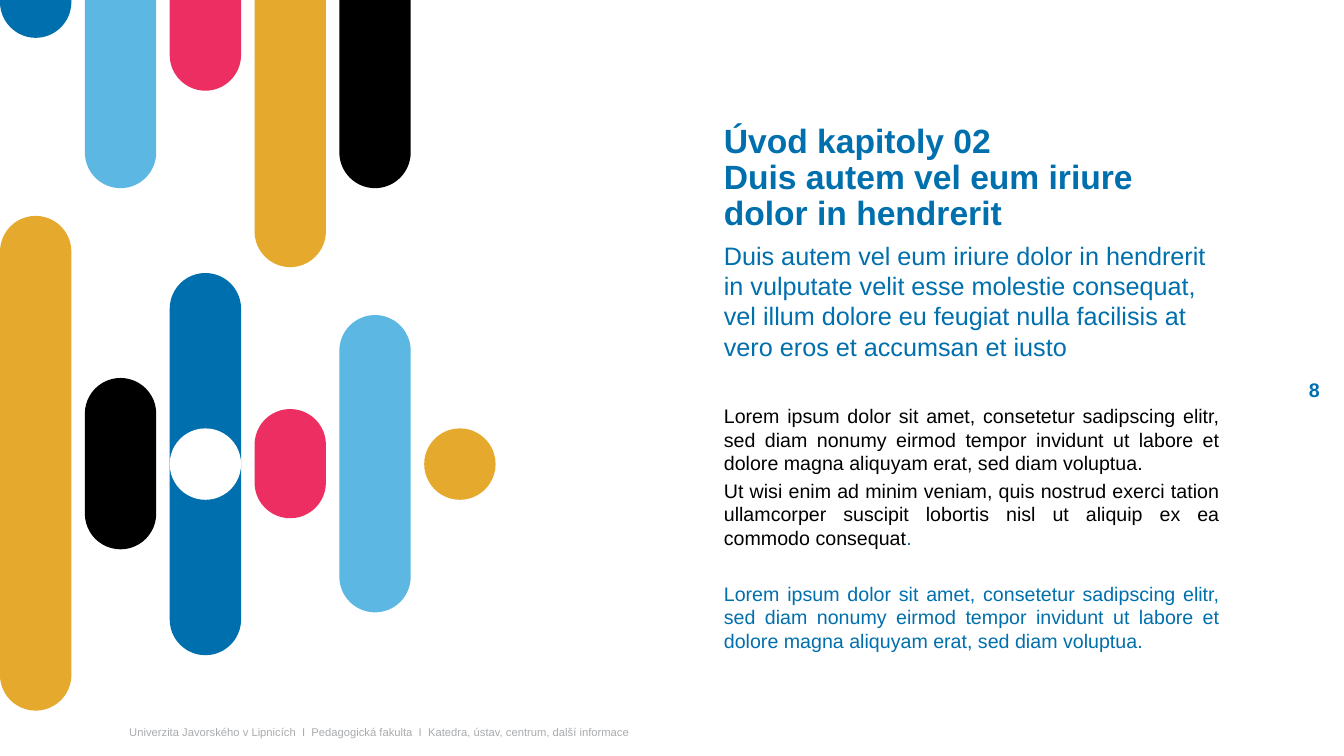
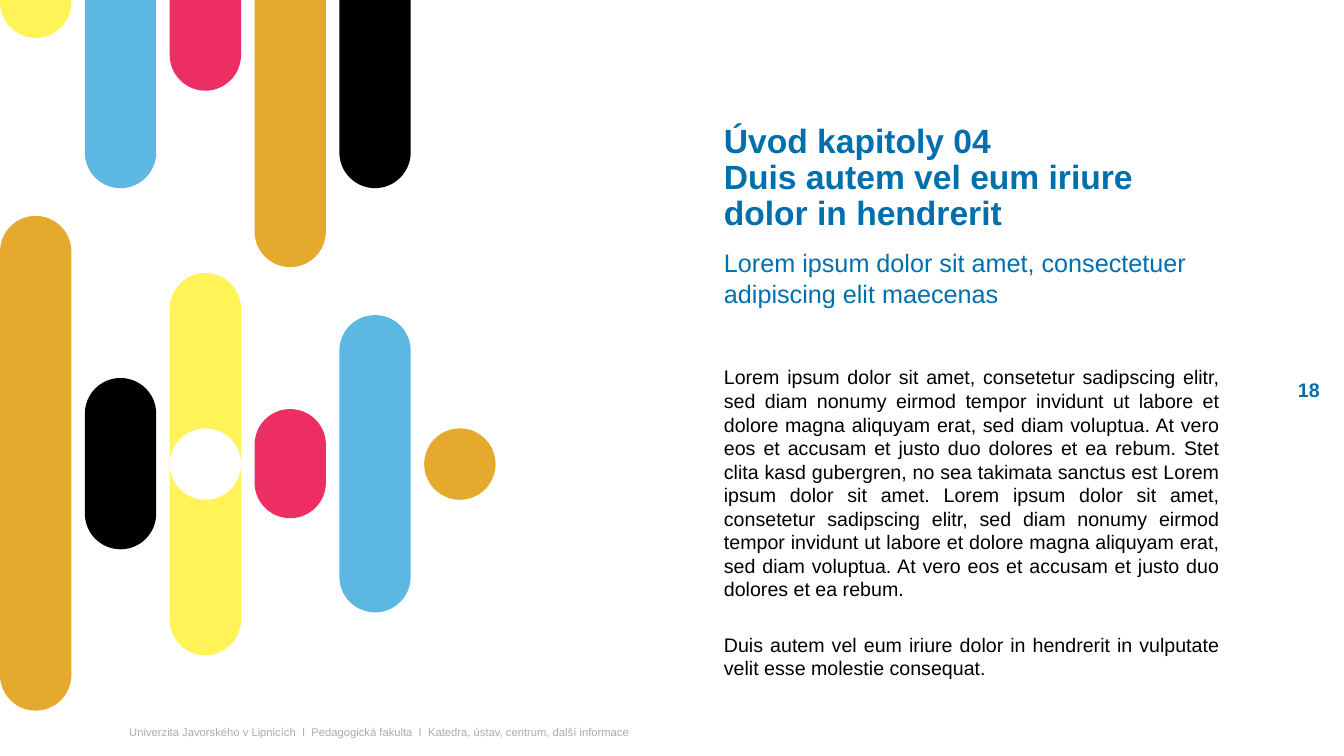
from dataclasses import dataclass

import lxml.etree
import pptx
import pptx.dml.color
import pptx.enum.shapes
import pptx.enum.text
import pptx.oxml.ns
import pptx.util

EMU_PER_PX = 7620
COLUMN_PITCH = 101
BAR_WIDTH = 85
ARC_HANDLE = 0.55
TEXT_LEFT = 850
TEXT_WIDTH = 614
SHAPE = pptx.enum.shapes.MSO_SHAPE
ALIGN = pptx.enum.text.PP_ALIGN
ANCHOR = pptx.enum.text.MSO_ANCHOR
qn = pptx.oxml.ns.qn


@dataclass(frozen=True)
class Theme:
    font: str = "Arial"
    blue: str = "006FAD"
    sky: str = "5CB8E2"
    pink: str = "ED2E62"
    gold: str = "E5AA2D"
    yellow: str = "FFF358"
    black: str = "000000"
    white: str = "FFFFFF"
    grey: str = "A9ABAE"
    title_size: int = 24
    lead_size: int = 18
    body_size: int = 14
    footer_size: int = 8


THEME = Theme()
FOOTER = (
    "Univerzita Javorského v Lipnicích  I  Pedagogická fakulta  I  "
    "Katedra, ústav, centrum, další informace"
)
LOREM = (
    "Lorem ipsum dolor sit amet, consetetur sadipscing elitr, sed diam nonumy "
    "eirmod tempor invidunt ut labore et dolore magna aliquyam erat, "
    "sed diam voluptua."
)
ACCUSAM = "At vero eos et accusam et justo duo dolores et ea rebum."


def px(length):
    return pptx.util.Emu(round(length * EMU_PER_PX))


def rgb(color):
    return pptx.dml.color.RGBColor.from_string(color)


def write(frame, text, *, size, color=THEME.black, bold=False,
          align=ALIGN.LEFT, before=0, line=None, follow=False):
    paragraph = frame.paragraphs[-1]
    if not follow:
        if paragraph.runs:
            paragraph = frame.add_paragraph()
        paragraph.alignment = align
        paragraph.space_before = pptx.util.Pt(before)
        if line:
            paragraph.line_spacing = line
    for index, part in enumerate(text.split("\n")):
        if index:
            paragraph.add_line_break()
        run = paragraph.add_run()
        run.text = part
        run.font.name = THEME.font
        run.font.size = pptx.util.Pt(size)
        run.font.bold = bold
        run.font.color.rgb = rgb(color)


def bend(segment, points):
    curve = lxml.etree.Element(qn("a:cubicBezTo"))
    for x, y in points:
        lxml.etree.SubElement(curve, qn("a:pt"), x=str(px(x)), y=str(px(y)))
    segment.getparent().replace(segment, curve)


class Deck:
    def __init__(self, theme):
        self.theme = theme
        self.presentation = pptx.Presentation()
        self.presentation.slide_width = px(1600)
        self.presentation.slide_height = px(900)
        self.slide = None

    def new_slide(self):
        blank = self.presentation.slide_layouts[6]
        self.slide = self.presentation.slides.add_slide(blank)

    def frame(self, left, top, width, height, anchor=ANCHOR.TOP):
        box = self.slide.shapes.add_textbox(px(left), px(top), px(width), px(height))
        box.text_frame.word_wrap = True
        box.text_frame.vertical_anchor = anchor
        return box.text_frame

    def title(self, text):
        write(self.frame(TEXT_LEFT, 142, TEXT_WIDTH, 143), text,
              size=self.theme.title_size, color=self.theme.blue, bold=True, line=0.9)

    def lead(self, text, top, height):
        write(self.frame(TEXT_LEFT, top, TEXT_WIDTH, height), text,
              size=self.theme.lead_size, color=self.theme.blue, before=3)

    def body(self, pieces, top, height):
        frame = self.frame(TEXT_LEFT, top, TEXT_WIDTH, height)
        for text, style in pieces:
            defaults = dict(size=self.theme.body_size, align=ALIGN.JUSTIFY, before=3)
            write(frame, text, **(defaults | style))

    def footer(self, number):
        write(self.frame(142, 857, 659, 29, ANCHOR.MIDDLE), FOOTER,
              size=self.theme.footer_size, color=self.theme.grey)
        write(self.frame(1530, 443, 53, 41, ANCHOR.MIDDLE), str(number),
              size=self.theme.body_size, color=self.theme.blue, bold=True,
              align=ALIGN.RIGHT)

    def paint(self, shape, color):
        shape.shadow.inherit = False
        shape.fill.solid()
        shape.fill.fore_color.rgb = rgb(color)
        shape.line.fill.background()

    def hanging_bar(self, shapes, column, height, color):
        left = column * COLUMN_PITCH
        radius = BAR_WIDTH / 2
        handle = radius * ARC_HANDLE
        shoulder = height - radius
        corners = [(BAR_WIDTH, shoulder), (BAR_WIDTH, 0), (0, 0),
                   (0, shoulder), (radius, height)]
        outline = shapes.build_freeform(px(left + radius), px(height))
        outline.add_line_segments([(px(left + x), px(y)) for x, y in corners])
        bar = outline.convert_to_shape()
        segments = list(bar.element.iter(qn("a:lnTo")))
        bend(segments[0], [(radius + handle, height), (BAR_WIDTH, shoulder + handle),
                           (BAR_WIDTH, shoulder)])
        bend(segments[4], [(0, shoulder + handle), (radius - handle, height),
                           (radius, height)])
        self.paint(bar, color)

    def capsule(self, shapes, column, top, height, color):
        kind = SHAPE.OVAL if height == BAR_WIDTH else SHAPE.ROUNDED_RECTANGLE
        bar = shapes.add_shape(kind, px(column * COLUMN_PITCH), px(top),
                               px(BAR_WIDTH), px(height))
        if kind == SHAPE.ROUNDED_RECTANGLE:
            bar.adjustments[0] = 0.5
        self.paint(bar, color)

    def motif(self, accent):
        theme = self.theme
        shapes = self.slide.shapes.add_group_shape().shapes
        hanging = [(45, accent), (224, theme.sky), (108, theme.pink),
                   (318, theme.gold), (224, theme.black)]
        for column, (height, color) in enumerate(hanging):
            self.hanging_bar(shapes, column, height, color)
        capsules = [
            (1, 450, 204, theme.black),
            (3, 487, 130, theme.pink),
            (5, 510, BAR_WIDTH, theme.gold),
            (0, 257, 589, theme.gold),
            (4, 375, 354, theme.sky),
            (2, 325, 455, accent),
            (2, 510, BAR_WIDTH, theme.white),
        ]
        for capsule in capsules:
            self.capsule(shapes, *capsule)

    def chapter(self, *, chapter, number, accent, lead, body):
        self.new_slide()
        self.title(f"Úvod kapitoly {chapter}\nDuis autem vel eum iriure dolor in hendrerit")
        self.lead(*lead)
        self.footer(number)
        self.body(*body)
        self.motif(accent)


def main():
    deck = Deck(THEME)
    section_gap = 23
    deck.chapter(
        chapter="02", number=8, accent=THEME.blue,
        lead=("Duis autem vel eum iriure dolor in hendrerit in vulputate velit esse "
              "molestie consequat, vel illum dolore eu feugiat nulla facilisis at "
              "vero eros et accumsan et iusto", 280, 157),
        body=([
            (LOREM, {}),
            ("Ut wisi enim ad minim veniam, quis nostrud exerci tation ullamcorper "
             "suscipit lobortis nisl ut aliquip ex ea commodo consequat", {}),
            (".", dict(color=THEME.blue, follow=True)),
            (LOREM, dict(color=THEME.blue, before=section_gap)),
        ], 475, 310),
    )
    deck.chapter(
        chapter="04", number=18, accent=THEME.yellow,
        lead=("Lorem ipsum dolor sit amet, consectetuer adipiscing elit maecenas",
              289, 85),
        body=([
            (f"{LOREM} {ACCUSAM} Stet clita kasd gubergren, no sea takimata sanctus "
             f"est Lorem ipsum dolor sit amet. {LOREM} {ACCUSAM}", {}),
            ("Duis autem vel eum iriure dolor in hendrerit in vulputate velit esse "
             "molestie consequat.", dict(before=section_gap)),
        ], 429, 390),
    )
    deck.presentation.save("out.pptx")


if __name__ == "__main__":
    main()
